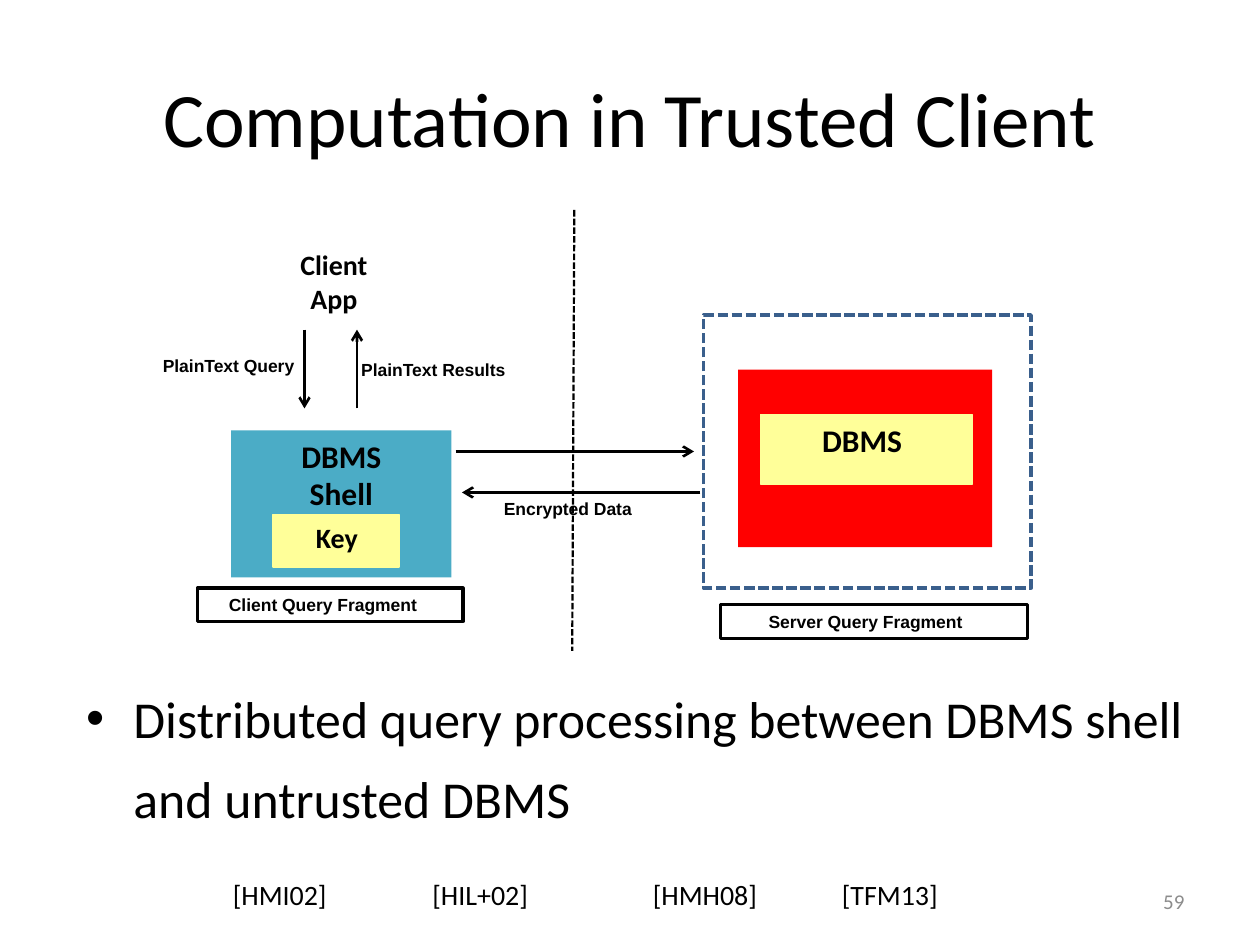
from pptx import Presentation
from pptx.dml.color import RGBColor
from pptx.enum.dml import MSO_LINE
from pptx.enum.shapes import MSO_CONNECTOR, MSO_SHAPE
from pptx.enum.text import MSO_ANCHOR, MSO_AUTO_SIZE, PP_ALIGN
from pptx.oxml.ns import qn
from pptx.util import Inches, Pt
from lxml import etree

BLACK = RGBColor(0, 0, 0)
WHITE = RGBColor(255, 255, 255)
TEAL = RGBColor(0x4B, 0xAC, 0xC6)
CREAM = RGBColor(0xFF, 0xFF, 0x99)
RED = RGBColor(255, 0, 0)
NAVY = RGBColor(0x3A, 0x5F, 0x8C)
GREY = RGBColor(0x8C, 0x8C, 0x8C)
LEFT, MID, RIGHT = PP_ALIGN.LEFT, PP_ALIGN.CENTER, PP_ALIGN.RIGHT
DASH = MSO_LINE.SQUARE_DOT
COLS, ROWS = 120, 90
WIDE, HIGH = Inches(10), Inches(7.5)

TITLE = ("Computation in Trusted Client", (6, 3.6, 108, 15), 44)
POINT = ("Distributed query processing between DBMS shell and untrusted DBMS",
         (7, 63, 108, 17), 29.6)

CLIENT = [
    ("DBMS\nShell", (22, 41, 21, 14), TEAL, None, 18, MID, 0),
    ("Client\nApp", (25.7, 23, 12.2, 8.4), WHITE, None, 16, MID, 0),
    ("Key", (26, 49, 12, 5), CREAM, (CREAM, 0.75), 16, LEFT, 4.1),
]
SERVER = [
    ("", (67, 30, 31.2, 26), None, (NAVY, 2, DASH), 18, MID, 0),
    ("", (70.3, 35.2, 24.2, 16.9), RED, None, 18, MID, 0),
    ("DBMS", (72.4, 39.5, 20.2, 6.6), CREAM, (CREAM, 0.75), 18, LEFT, 5.9),
]
PARTS = [
    ("Client Query Fragment", (18.8, 56, 25.3, 3.2), 3),
    ("Server Query Fragment", (68.6, 57.6, 29.3, 3.2), 4.6),
]
LABELS = [
    ("Encrypted Data", (46.8, 46.8, 20.3, 3.2), 1.2),
    ("PlainText Query", (12.5, 33.2, 19.6, 3.2), 3),
    ("PlainText Results", (31.4, 33.6, 19.6, 3.2), 3),
]
ARROWS = [
    (29, 31.4, 29, 38.9),
    (34, 38.9, 34, 31.4),
    (43.4, 43, 66.1, 43),
    (66.7, 46.9, 44, 46.9),
]
BORDER = (54.7, 20, 54.5, 62)
REFS = [("[HMI02]", 21, 11.4), ("[HIL+02]", 40, 11.6),
        ("[HMH08]", 61, 12.5), ("[TFM13]", 79, 11.6)]
PAGE = ("59", (86, 83.4, 26.8, 4.8))


def across(n):
    return int(WIDE * n / COLS)


def down(n):
    return int(HIGH * n / ROWS)


def place(box):
    x, y, w, h = box
    return across(x), down(y), across(w), down(h)


def write(shape, text, size, align, face="Calibri", bold=False, color=BLACK):
    frame = shape.text_frame
    frame.text = text
    for para in frame.paragraphs:
        para.alignment = align
        for run in para.runs:
            font = run.font
            font.size, font.name, font.bold = Pt(size), face, bold
            font.color.rgb = color
    return frame


def inset(frame, pad):
    frame.word_wrap = True
    frame.vertical_anchor = MSO_ANCHOR.TOP
    frame.margin_left, frame.margin_right = across(pad), 0


def block(host, text, box, fill, edge, size, align, pad, face="Calibri"):
    shape = host.add_shape(MSO_SHAPE.RECTANGLE, *place(box))
    shape.shadow.inherit = False
    if fill is None:
        shape.fill.background()
    else:
        shape.fill.solid()
        shape.fill.fore_color.rgb = fill
    if edge is None:
        shape.line.fill.background()
    else:
        shape.line.color.rgb, shape.line.width = edge[0], Pt(edge[1])
        if len(edge) > 2:
            shape.line.dash_style = edge[2]
    if text:
        inset(write(shape, text, size, align, face, True), pad)


def label(host, text, box, size, align=LEFT, pad=1.2, **style):
    shape = host.add_textbox(*place(box))
    frame = write(shape, text, size, align, **style)
    inset(frame, pad)
    return frame


def link(host, ends, width):
    x, y, u, v = ends
    line = host.add_connector(MSO_CONNECTOR.STRAIGHT,
                              across(x), down(y), across(u), down(v))
    line.line.color.rgb, line.line.width = BLACK, Pt(width)
    etree.SubElement(line._element.spPr, qn("a:effectLst"))
    return line.line


def main():
    deck = Presentation()
    deck.slide_width, deck.slide_height = WIDE, HIGH
    slide = deck.slides.add_slide(deck.slide_layouts[1])
    shapes = slide.shapes

    for holder, (text, box, size), align in zip(
            slide.placeholders, (TITLE, POINT), (MID, LEFT)):
        holder.left, holder.top, holder.width, holder.height = place(box)
        frame = write(holder, text, size, align)
        frame.auto_size = MSO_AUTO_SIZE.NONE
    frame.paragraphs[0].line_spacing = 1.3

    for row in CLIENT:
        block(shapes, *row)
    group = shapes.add_group_shape().shapes
    for row in SERVER:
        block(group, *row)
    for text, box, pad in PARTS:
        block(shapes, text, box, WHITE, (BLACK, 1.75), 10, LEFT, pad, "Arial")

    link(shapes, BORDER, 1.25).dash_style = DASH
    for ends in ARROWS:
        pen = link(shapes, ends, 1.5)
        etree.SubElement(pen._get_or_add_ln(), qn("a:tailEnd"), type="arrow")

    for text, box, pad in LABELS:
        label(shapes, text, box, 10, pad=pad, face="Arial", bold=True)
    for text, x, w in REFS:
        label(shapes, text, (x, 83, w, 4.4), 16)
    page = label(shapes, *PAGE, 12, RIGHT, color=GREY)
    page.vertical_anchor = MSO_ANCHOR.MIDDLE

    deck.save("out.pptx")


if __name__ == "__main__":
    main()
